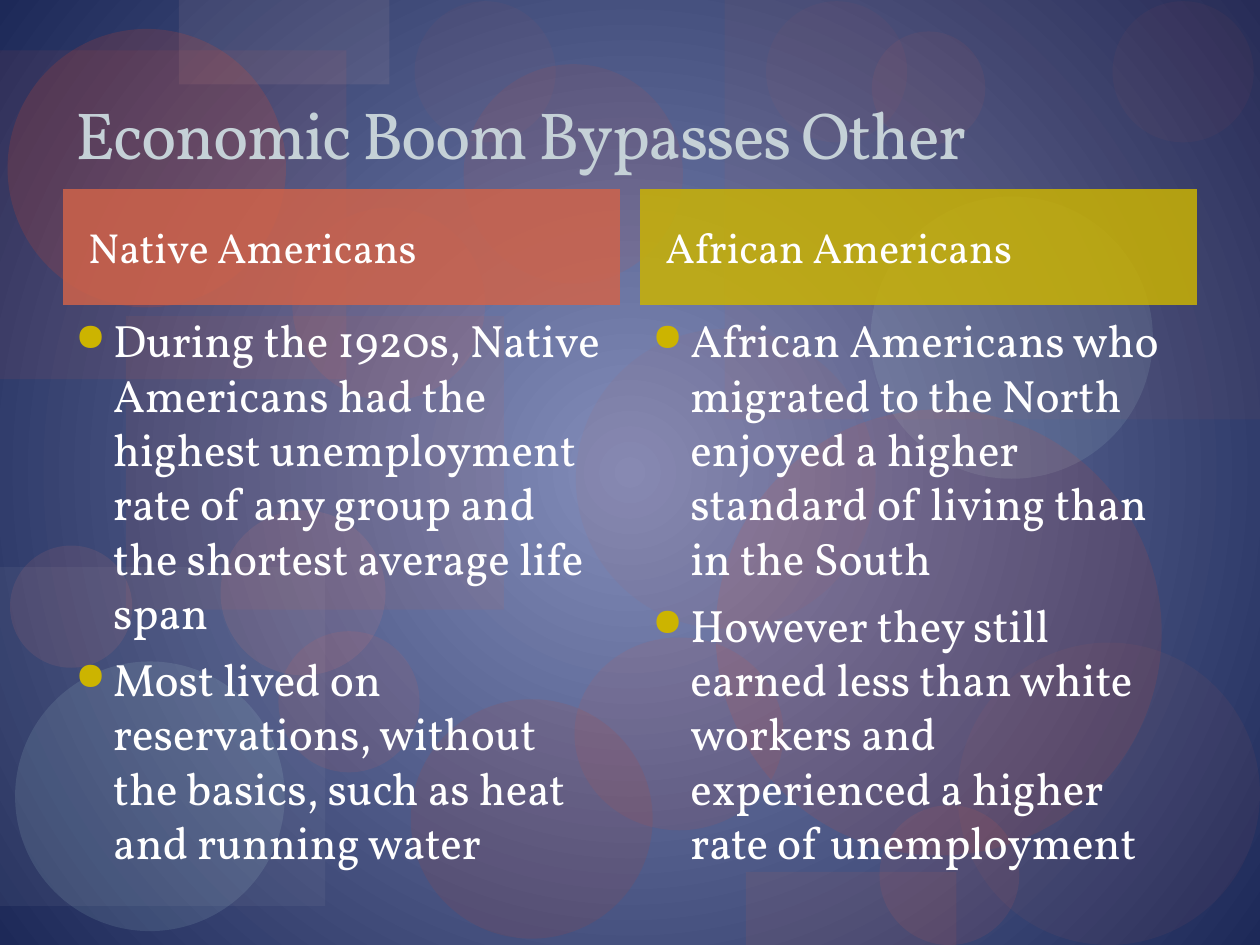
"""Build a two-column comparison slide over a field of translucent shapes."""
from lxml import etree
from pptx import Presentation, util as u
from pptx.dml import color
from pptx.enum import shapes, text
from pptx.oxml import ns

COLORS = {
    "glow": "838DBA", "night": "1D2958", "clay": "D16349", "brick": "BB412B",
    "silver": "B8BAC3", "rust": "BF6154", "tomato": "FF6347", "mint": "C1E8E4",
    "flame": "FF471B", "blush": "E5B7B1", "coral": "FF8674", "gold": "CCB400",
    "white": "FFFFFF", "mist": "C5D1D7",
}
FONT = "Vollkorn"
MARGIN, COLUMN = 0.5, 4.42
HEADER_TOP, HEADER_HEIGHT = 1.5, 0.92
BODY_TOP, BODY_HEIGHT = 2.43, 4.28
RECTANGLE, OVAL = shapes.MSO_SHAPE.RECTANGLE, shapes.MSO_SHAPE.OVAL

backdrop = [
    (RECTANGLE, 1, 2.51, 3, 2.33, "clay", 9),
    (OVAL, 3.26, 5.55, 1.92, 1.9, "brick", 13),
    (RECTANGLE, 5.75, 0, 4.25, 3.33, "clay", 6),
    (RECTANGLE, 0, 4.5, 2.58, 2.69, "silver", 8),
    (OVAL, 4.57, 2.61, 2.38, 2.38, "rust", 8),
    (OVAL, 6.98, 6.39, 1.11, 1.11, "tomato", 9),
    (OVAL, 6.91, 1.56, 2.24, 2.24, "mint", 11),
    (OVAL, 0.12, 5.25, 2.14, 2.14, "mint", 12),
    (OVAL, 2.21, 5.01, 1.12, 1.12, "tomato", 9),
    (OVAL, 4.56, 5.06, 1.66, 1.53, "flame", 8),
    (RECTANGLE, 0, 0.4, 2.75, 2.61, "tomato", 7),
    (RECTANGLE, 1.42, 0, 1.67, 0.67, "blush", 10),
    (OVAL, 0.06, 0.23, 2.21, 2.21, "flame", 15),
    (OVAL, 0.08, 4.33, 0.97, 0.97, "coral", 10),
    (OVAL, 2.32, 1.65, 1.53, 1.53, "tomato", 9),
    (OVAL, 3.68, 0.51, 1.74, 1.74, "flame", 8),
    (OVAL, 5.68, 3.25, 3.54, 3.54, "flame", 10),
    (OVAL, 6.08, 0.01, 1.12, 1.12, "tomato", 4),
    (OVAL, 7.6, 5.1, 2.4, 2.4, "rust", 8),
    (OVAL, 1.75, 4.05, 1.31, 1.31, "coral", 10),
    (OVAL, 6.92, 0.25, 0.9, 0.9, "tomato", 6),
    (OVAL, 8.83, 0.01, 1.12, 1.12, "tomato", 4),
    (RECTANGLE, 5.92, 6.92, 1.67, 0.58, "clay", 10),
    (OVAL, 3.29, 0.01, 1.12, 1.12, "tomato", 4),
]
columns = [
    ("Native Americans", "clay", [
        "During the 1920s, Native Americans had the highest unemployment rate "
        "of any group and the shortest average life span",
        "Most lived on reservations, without the basics, such as heat and running water",
    ]),
    ("African Americans", "gold", [
        "African Americans who migrated to the North enjoyed a higher standard "
        "of living than in the South",
        "However they still earned less than white workers and experienced "
        "a higher rate of unemployment",
    ]),
]

presentation = Presentation()
presentation.slide_width, presentation.slide_height = u.Inches(10), u.Inches(7.5)
slide = presentation.slides.add_slide(presentation.slide_layouts[6])


def add_panel(kind, left, top, width, height, fill, opacity):
    shape = slide.shapes.add_shape(kind, *map(u.Inches, (left, top, width, height)))
    shape.shadow.inherit = False
    shape.line.fill.background()
    shape.fill.solid()
    shape.fill.fore_color.rgb = color.RGBColor.from_string(COLORS[fill])
    tint = shape.fill._xPr.find(".//" + ns.qn("a:srgbClr"))
    etree.SubElement(tint, ns.qn("a:alpha"), val=str(opacity * 1000))
    return shape


def style_paragraph(paragraph, size, ink):
    paragraph.alignment = text.PP_ALIGN.LEFT
    for run in paragraph.runs:
        run.font.name, run.font.size = FONT, u.Pt(size)
        run.font.color.rgb = color.RGBColor.from_string(COLORS[ink])


background = slide.background.fill
background.gradient()
for stop, name, position in zip(background.gradient_stops, ("glow", "night"), (0, 1)):
    stop.color.rgb = color.RGBColor.from_string(COLORS[name])
    stop.position = position
gradient = slide.background._cSld.find(".//" + ns.qn("a:gradFill"))
gradient.remove(gradient.find(ns.qn("a:lin")))
circle = etree.SubElement(gradient, ns.qn("a:path"), {"path": "circle"})
etree.SubElement(circle, ns.qn("a:fillToRect"), dict.fromkeys("ltrb", "50000"))

for panel in backdrop:
    add_panel(*panel)

title = slide.shapes.add_textbox(*map(u.Inches, (MARGIN, 0.17, 10 - 2 * MARGIN, 1.25)))
title.text_frame.word_wrap = True
title.text_frame.vertical_anchor = text.MSO_ANCHOR.BOTTOM
title.text_frame.text = "Economic Boom Bypasses Other"
style_paragraph(title.text_frame.paragraphs[0], 38, "mist")
title.text_frame.paragraphs[0].runs[0].font._element.set("spc", "-100")

for index, (heading, fill, points) in enumerate(columns):
    left = MARGIN + index * (10 - 2 * MARGIN - COLUMN)
    header = add_panel(RECTANGLE, left, HEADER_TOP, COLUMN, HEADER_HEIGHT, fill, 83)
    frame = header.text_frame
    frame.margin_left = u.Inches(0.2)
    frame.margin_top = frame.margin_right = frame.margin_bottom = u.Inches(0.1)
    frame.vertical_anchor = text.MSO_ANCHOR.MIDDLE
    frame.text = heading
    style_paragraph(frame.paragraphs[0], 24, "white")

    body = slide.shapes.add_textbox(*map(u.Inches, (left, BODY_TOP, COLUMN, BODY_HEIGHT)))
    body.text_frame.word_wrap = True
    body.text_frame.text = "\n".join(points)
    for paragraph in body.text_frame.paragraphs:
        style_paragraph(paragraph, 25.9, "white")
        paragraph.space_before = u.Pt(7)
        properties = paragraph._p.get_or_add_pPr()
        properties.set("marL", str(u.Inches(0.3)))
        properties.set("indent", str(u.Inches(-0.3)))
        bullet_color = etree.SubElement(properties, ns.qn("a:buClr"))
        etree.SubElement(bullet_color, ns.qn("a:srgbClr"), val=COLORS["gold"])
        etree.SubElement(properties, ns.qn("a:buSzPct"), val="85000")
        etree.SubElement(properties, ns.qn("a:buChar"), char="●")

presentation.save("out.pptx")
